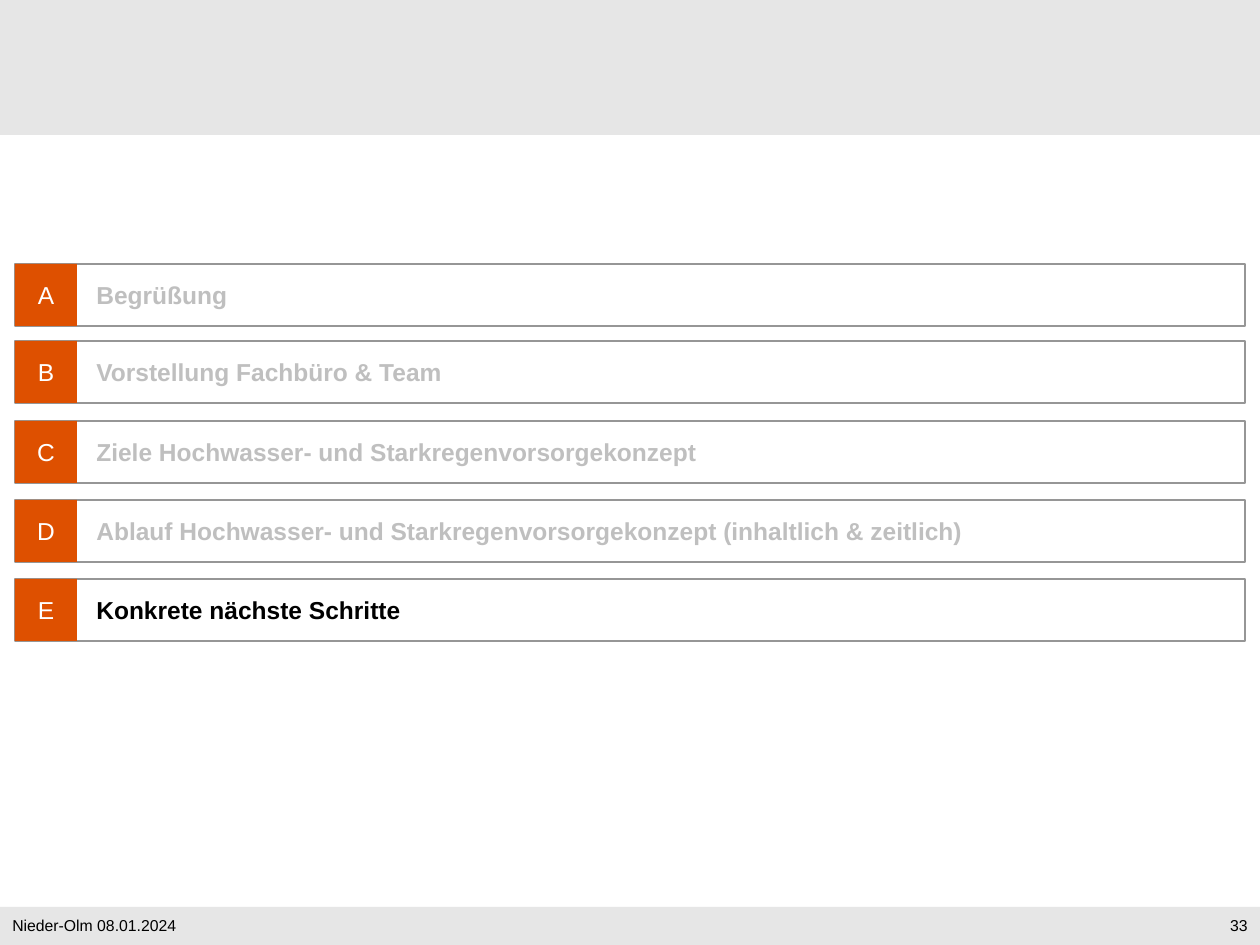
import pptx
import pptx.util
import pptx.dml.color
import pptx.enum.shapes
import pptx.enum.text

THEME = {
    "font": "Arial", "body": 14, "small": 9, "edge": 0.75,
    "band": "E6E6E6", "tile": "DE5000", "line": "969696",
    "white": "FFFFFF", "dim": "BFBFBF", "black": "000000",
}
SCALE = 914400 / 126  # EMU per px
ALIGN = pptx.enum.text.PP_ALIGN


def rect(parent, box, fill=None, line=None):
    kind = pptx.enum.shapes.MSO_SHAPE.RECTANGLE
    shape = parent.add_shape(kind, *[round(n * SCALE) for n in box])
    shape.shadow.inherit = False
    if fill:
        shape.fill.solid()
        shape.fill.fore_color.rgb = pptx.dml.color.RGBColor.from_string(THEME[fill])
    else:
        shape.fill.background()
    if line:
        shape.line.color.rgb = pptx.dml.color.RGBColor.from_string(THEME[line])
        shape.line.width = pptx.util.Pt(THEME["edge"])
    else:
        shape.line.fill.background()
    return shape


def write(shape, text, size, color, bold=False, align=ALIGN.LEFT):
    frame = shape.text_frame
    frame.text = text
    frame.word_wrap = True
    frame.vertical_anchor = pptx.enum.text.MSO_ANCHOR.MIDDLE
    frame.margin_top = frame.margin_bottom = 0
    para = frame.paragraphs[0]
    para.alignment = align
    font = para.runs[0].font
    font.name = THEME["font"]
    font.size = pptx.util.Pt(THEME[size])
    font.bold = bold
    font.color.rgb = pptx.dml.color.RGBColor.from_string(THEME[color])


deck = pptx.Presentation()
deck.slide_width = round(1260 * SCALE)
deck.slide_height = round(945 * SCALE)
slide = deck.slides.add_slide(deck.slide_layouts[6])

# Header and footer bands
rect(slide.shapes, (0, 907, 1260, 38), "band")
rect(slide.shapes, (0, 0, 1260, 135), "band")

# Footer text
for left, width, text, align in [
    (0, 968, "Nieder-Olm 08.01.2024", ALIGN.LEFT),
    (1165, 95, "33", ALIGN.RIGHT),
]:
    box = slide.shapes.add_textbox(*[round(n * SCALE) for n in (left, 910, width, 31)])
    write(box, text, "small", "black", align=align)

# Agenda rows, with the current one in black
agenda = [
    ("A", 264, "Begrüßung"),
    ("B", 341, "Vorstellung Fachbüro & Team"),
    ("C", 421, "Ziele Hochwasser- und Starkregenvorsorgekonzept"),
    ("D", 500, "Ablauf Hochwasser- und Starkregenvorsorgekonzept (inhaltlich & zeitlich)"),
    ("E", 579, "Konkrete nächste Schritte"),
]
now = "E"
side = 62
for mark, top, topic in agenda:
    row = slide.shapes.add_group_shape().shapes
    label = row.add_textbox(*[round(n * SCALE) for n in (84, top, 1162, side)])
    write(label, topic, "body", "black" if mark == now else "dim", bold=True)
    rect(row, (15, top, 1230, side), line="line")
    tile = rect(row, (15, top, side, side), "tile")
    write(tile, mark, "body", "white", align=ALIGN.CENTER)

deck.save("out.pptx")
